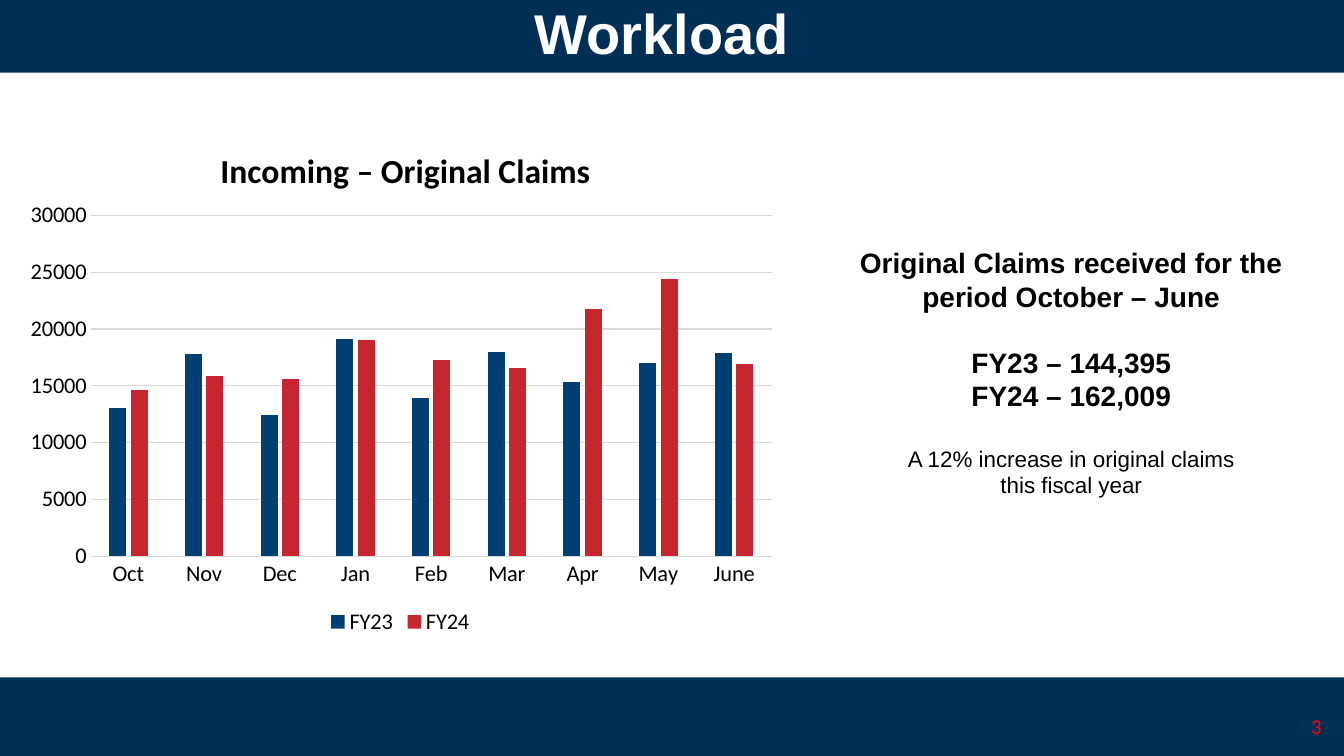
from lxml.etree import SubElement
from pptx import Presentation
from pptx.chart.data import CategoryChartData as ChartData
from pptx.dml.color import RGBColor as RGB
from pptx.enum.chart import XL_CHART_TYPE as Kind, XL_LEGEND_POSITION as Legend, XL_TICK_MARK as Tick
from pptx.enum.shapes import MSO_SHAPE as Shape
from pptx.enum.text import MSO_ANCHOR as Anchor, PP_ALIGN as Align
from pptx.oxml.ns import qn
from pptx.util import Inches, Pt

COLORS = {"navy": "002F56", "white": "FFFFFF", "black": "000000", "red": "FF0000",
          "grid": "D9D9D9", "fy23": "003F72", "fy24": "C62630"}
TITLE = "Workload"
BANDS = [(0, 0.72), (6.72, 0.78)]  # top, height
# text, size, bold, space before
SUMMARY = [
    ("Original Claims received for the period October – June", 20, True, 0),
    ("FY23 – 144,395", 20, True, 23),
    ("FY24 – 162,009", 20, True, 0),
    ("A 12% increase in original claims", 16, False, 23),
    ("this fiscal year", 16, False, 0),
]
PAGE = "3"
HEADING = "Incoming – Original Claims"
MONTHS = ["Oct", "Nov", "Dec", "Jan", "Feb", "Mar", "Apr", "May", "June"]
CLAIMS = {
    "FY23": [13000, 17800, 12400, 19100, 13900, 18000, 15300, 17000, 17900],
    "FY24": [14600, 15900, 15600, 19000, 17300, 16600, 21800, 24400, 16900],
}


def tint(name):
    return RGB.from_string(COLORS[name])


def style(font, size, color="black", face="Calibri", bold=False):
    font.size, font.name, font.bold = Pt(size), face, bold
    font.color.rgb = tint(color)


def write(para, text, align, *look):
    para.alignment = align
    run = para.add_run()
    run.text = text
    style(run.font, *look)


def place(shape, *box):
    shape.left, shape.top, shape.width, shape.height = map(Inches, box)


def pin(owner, after, **spots):
    """Fix a chart part at fractions of the chart area."""
    old = owner.find(qn("c:layout"))
    if old is not None:
        owner.remove(old)
    layout = SubElement(owner, qn("c:layout"))
    if after is None:
        owner.insert(0, layout)
    else:
        after.addnext(layout)
    manual = SubElement(layout, qn("c:manualLayout"))
    if "w" in spots:
        SubElement(manual, qn("c:layoutTarget")).set("val", "inner")
    for side in "xy":
        SubElement(manual, qn(f"c:{side}Mode")).set("val", "edge")
    for key, spot in spots.items():
        SubElement(manual, qn(f"c:{key}")).set("val", str(spot))


def add_bands(slide):
    for top, high in BANDS:
        band = slide.shapes.add_shape(Shape.RECTANGLE, 0, Inches(top), Inches(13.33), Inches(high))
        band.shadow.inherit = False
        band.fill.solid()
        band.fill.fore_color.rgb = tint("navy")
        band.line.fill.background()
        slide.shapes._spTree.insert(2, band._element)


def add_title(slide):
    title = slide.shapes.title
    place(title, -0.1, -0.08, 13.33, 0.8)
    title.text_frame.vertical_anchor = Anchor.MIDDLE
    write(title.text_frame.paragraphs[0], TITLE, Align.CENTER, 40, "white", "Arial", True)


def add_summary(slide):
    box = slide.shapes.add_textbox(*map(Inches, (8.3, 2.39, 4.65, 2.66)))
    frame = box.text_frame
    frame.word_wrap = True
    for i, (text, size, bold, gap) in enumerate(SUMMARY):
        para = frame.add_paragraph() if i else frame.paragraphs[0]
        if gap:
            para.space_before = Pt(gap)
        write(para, text, Align.CENTER, size, "black", "Arial", bold)


def add_page(slide):
    frame = slide.shapes.add_textbox(*map(Inches, (12.67, 7, 0.56, 0.4))).text_frame
    frame.word_wrap = True
    frame.vertical_anchor = Anchor.MIDDLE
    frame.margin_left = frame.margin_right = Inches(0.12)
    write(frame.paragraphs[0], PAGE, Align.RIGHT, 15, "red")


def add_claims(slide):
    data = ChartData()
    data.categories = MONTHS
    for year, counts in CLAIMS.items():
        data.add_series(year, counts)
    area = map(Inches, (0.13, 1.15, 7.68, 5.2))
    chart = slide.shapes.add_chart(Kind.COLUMN_CLUSTERED, *area, data).chart
    style(chart.font, 16)

    chart.has_title = True
    write(chart.chart_title.text_frame.paragraphs[0], HEADING, Align.CENTER, 24, "black", "Calibri", True)
    head = chart.chart_title._element
    pin(head, head.find(qn("c:tx")), x=0.26, y=0.05)
    pin(chart._chartSpace.chart.plotArea, None, x=0.1, y=0.19, w=0.88, h=0.65)

    chart.has_legend = True
    chart.legend.position = Legend.BOTTOM
    chart.legend.include_in_layout = False
    style(chart.legend.font, 16)

    plot = chart.plots[0]
    plot.gap_width, plot.overlap, plot.vary_by_categories = 219, -27, False
    for series in plot.series:
        series.format.fill.solid()
        series.format.fill.fore_color.rgb = tint(series.name.lower())

    months, counts = chart.category_axis, chart.value_axis
    for axis in (months, counts):
        axis.major_tick_mark = axis.minor_tick_mark = Tick.NONE
        style(axis.tick_labels.font, 16)
    counts.minimum_scale, counts.maximum_scale, counts.major_unit = 0, 30000, 5000
    counts.format.line.fill.background()
    for line in (months.format.line, counts.major_gridlines.format.line):
        line.color.rgb = tint("grid")
        line.width = Pt(0.75)


def main():
    deck = Presentation()
    deck.slide_width, deck.slide_height = Inches(13.33), Inches(7.5)
    slide = deck.slides.add_slide(deck.slide_layouts[5])
    add_bands(slide)
    add_title(slide)
    add_summary(slide)
    add_page(slide)
    add_claims(slide)
    deck.save("out.pptx")


if __name__ == "__main__":
    main()
